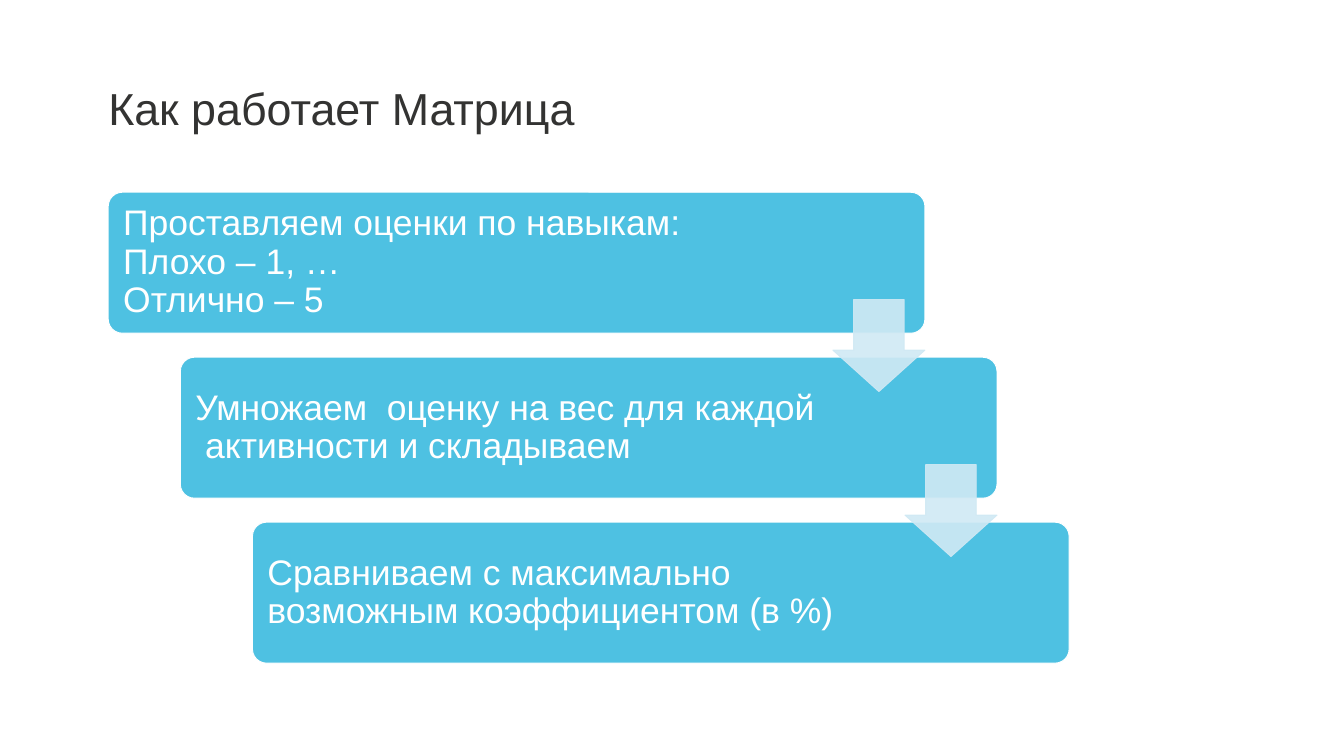
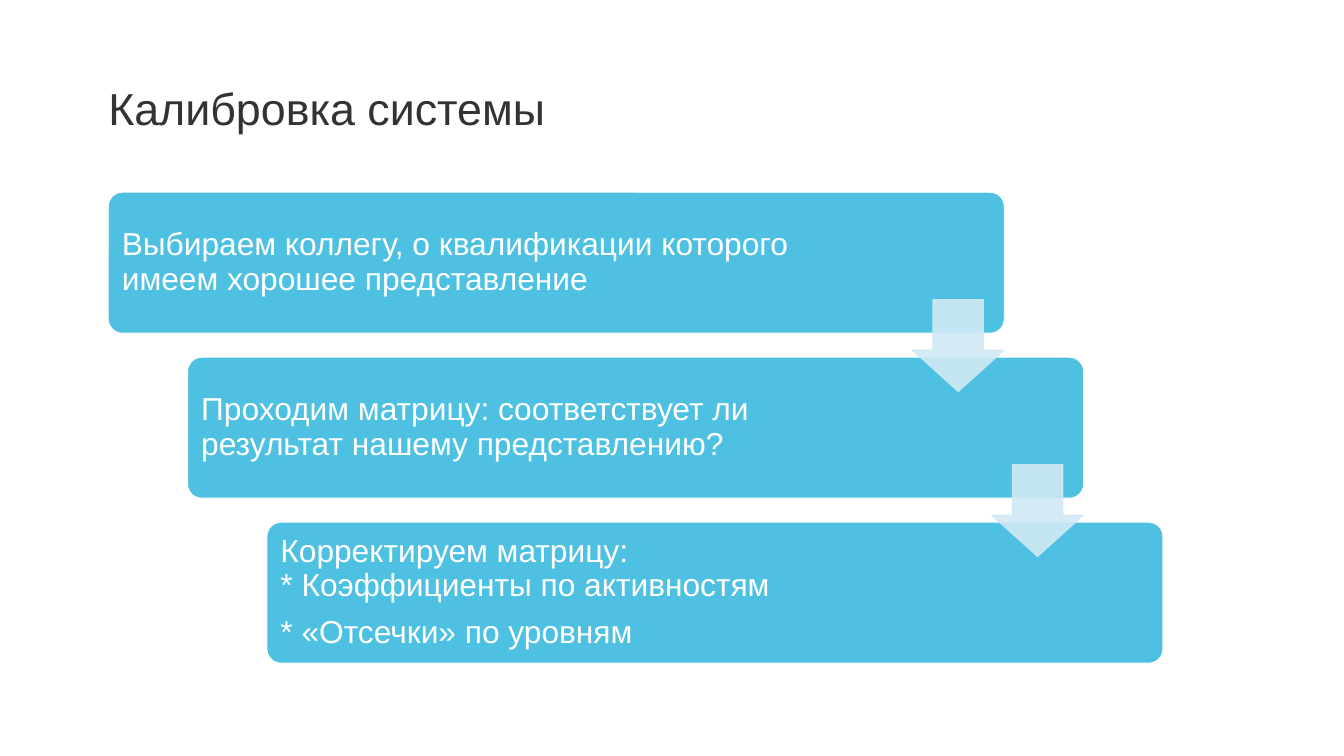
"""Two slides that each show a process as three stepped bars joined by arrows."""
from lxml import etree
from pptx import Presentation
from pptx.dml.color import RGBColor
from pptx.enum import shapes, text
from pptx.oxml.ns import qn
from pptx.util import Pt

BLUE = RGBColor(0x4E, 0xC1, 0xE2)
PALE = RGBColor(0xD0, 0xE9, 0xF4)
WHITE = RGBColor(0xFF, 0xFF, 0xFF)
DARK = RGBColor(0x33, 0x33, 0x32)
FONT = "Arial"

SLIDES = [
    dict(title="Как работает Матрица", bar_w=875, step_x=77.25, size=38,
         inset=11.5, text_w=(711, 690.5, 690.5),
         steps=[["Проставляем оценки по навыкам: \nПлохо – 1, … \nОтлично – 5"],
                ["Умножаем  оценку на вес для каждой  активности и складываем"],
                ["Сравниваем с максимально возможным коэффициентом (в %)"]]),
    dict(title="Калибровка системы", bar_w=960, step_x=85, size=34,
         inset=10, text_w=(796, 768, 768),
         steps=[["Выбираем коллегу, о квалификации которого имеем хорошее представление"],
                ["Проходим матрицу: соответствует ли результат нашему представлению?"],
                ["Корректируем матрицу:\n* Коэффициенты по активностям",
                 "* «Отсечки» по уровням"]]),
]

LEFT, TOP = 116, 206
BAR_H, STEP_Y = 151, 176.75
PAD = 4.5
ARROW, ARROW_DROP = 98.6, 115


def write(tf, paragraphs, size, color, inset=0, spacing=0.9, after=0,
          anchor=text.MSO_ANCHOR.MIDDLE):
    """Fill a text frame with left-aligned paragraphs in one format."""
    tf.word_wrap = True
    tf.auto_size = text.MSO_AUTO_SIZE.NONE
    tf.vertical_anchor = anchor
    tf.margin_left = tf.margin_right = tf.margin_top = tf.margin_bottom = Pt(inset)
    for i, words in enumerate(paragraphs):
        p = tf.add_paragraph() if i else tf.paragraphs[0]
        p.text = words
        p.alignment = text.PP_ALIGN.LEFT
        p.line_spacing = spacing
        p.space_before, p.space_after = Pt(0), Pt(after)
        for r in p.runs:
            r.font.name, r.font.size = FONT, Pt(size)
            r.font.color.rgb = color


def add_box(slide, kind, box, fill, line, adjust, alpha=None):
    """Add a filled and outlined preset shape."""
    sp = slide.shapes.add_shape(kind, *map(Pt, box))
    sp.shadow.inherit = False
    sp.fill.solid()
    sp.fill.fore_color.rgb = fill
    sp.line.color.rgb = line
    sp.line.width = Pt(1)
    for i, value in enumerate(adjust):
        sp.adjustments[i] = value
    if alpha:
        for clr in sp._element.spPr.iter(qn("a:srgbClr")):
            etree.SubElement(clr, qn("a:alpha"), val=str(alpha * 1000))


def add_process(prs, title, bar_w, step_x, size, inset, text_w, steps):
    """Add one slide with its title, bars, texts and arrows."""
    slide = prs.slides.add_slide(prs.slide_layouts[5])
    sp = slide.shapes.title
    sp.left, sp.top, sp.width, sp.height = map(Pt, (LEFT, 90, 933, 67))
    write(sp.text_frame, [title], 48, DARK, spacing=0.96, anchor=text.MSO_ANCHOR.TOP)

    spots = [(LEFT + i * step_x, TOP + i * STEP_Y) for i in range(len(steps))]
    for (x, y), width, paragraphs in zip(spots, text_w, steps):
        add_box(slide, shapes.MSO_SHAPE.ROUNDED_RECTANGLE, (x, y, bar_w, BAR_H),
                BLUE, WHITE, [0.1])
        box = (x + PAD, y + PAD, width, BAR_H - 2 * PAD)
        tb = slide.shapes.add_textbox(*map(Pt, box))
        write(tb.text_frame, paragraphs, size, WHITE, inset=inset, after=13)
    for x, y in spots[:-1]:
        add_box(slide, shapes.MSO_SHAPE.DOWN_ARROW,
                (x + bar_w - ARROW, y + ARROW_DROP, ARROW, ARROW),
                PALE, PALE, [0.55, 0.45], alpha=90)


def main():
    """Build and save the presentation."""
    prs = Presentation()
    prs.slide_width, prs.slide_height = Pt(1440), Pt(810)
    for content in SLIDES:
        add_process(prs, **content)
    prs.save("out.pptx")


if __name__ == "__main__":
    main()
